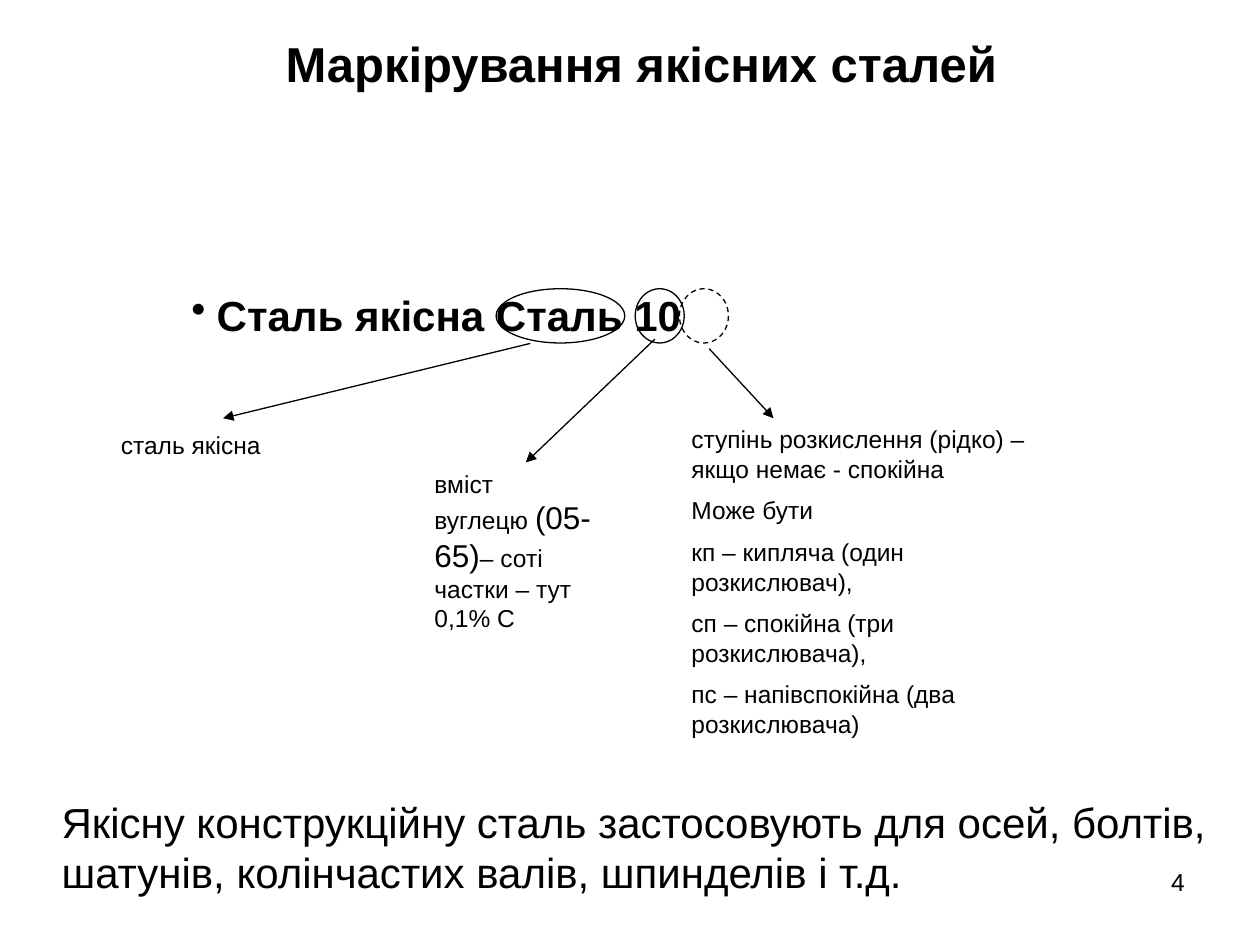
from lxml import etree
from pptx import Presentation
from pptx.dml.color import RGBColor
from pptx.enum import dml, shapes, text
from pptx.oxml.ns import qn
from pptx.util import Pt

FONT, INK = "Arial", "000000"
LEFT, CENTER, RIGHT = text.PP_ALIGN.LEFT, text.PP_ALIGN.CENTER, text.PP_ALIGN.RIGHT

# Content: boxes are (left, top, width, height) in points
TITLE = ("Маркірування якісних сталей", (42.5, 15, 648, 42.5))
GRADE = ("Сталь якісна Сталь 10", (102.25, 162, 310.3, 36))
BULLET_INDENT = 14.5

# Each paragraph is a list of (text, size) runs
NOTES = [
    ((62, 242, 99.5, 24), LEFT, [[("сталь якісна", 14)]]),
    ((241.2, 264.25, 105, 101), LEFT, [
        [("вміст вуглецю ", 14), ("(05-65)", 18), ("– соті частки – тут 0,1% С", 14)]]),
    ((388, 239, 212.5, 191.5), LEFT, [
        [("ступінь розкислення (рідко) – якщо немає - спокійна", 14)],
        [("Може бути", 14)],
        [("кп – кипляча (один розкислювач),", 14)],
        [("сп – спокійна (три розкислювача),", 14)],
        [("пс – напівспокійна (два розкислювача)", 14)]]),
    ((28.1, 451.4, 677.5, 65), LEFT, [
        [("Якісну конструкційну сталь застосовують для осей, болтів, "
          "шатунів, колінчастих валів, шпинделів і т.д.", 24)]]),
    ((516, 492, 168, 37.5), RIGHT, [[("4", 14)]]),
]

# Ovals round the parts of the grade: left, width, dashed
OVAL_TOP, OVAL_HEIGHT = 165, 31
OVALS = [(283.5, 73.5, False), (363, 28, False), (388.25, 28, True)]
ARROWS = [(303, 196.25, 127.5, 239), (374.25, 193.75, 300.5, 264.25),
          (405.25, 199.25, 442, 239)]


def color(value):
    return RGBColor.from_string(value)


def place(sp, box):
    sp.left, sp.top, sp.width, sp.height = map(Pt, box)


def style(font, size, bold=False):
    font.name, font.size, font.bold = FONT, Pt(size), bold
    font.color.rgb = color(INK)


def outline(sp):
    sp.line.color.rgb = color(INK)
    sp.line.width = Pt(0.75)


def add_text(box):
    tf = s.shapes.add_textbox(*map(Pt, box)).text_frame
    tf.word_wrap = True
    return tf


prs = Presentation()
prs.slide_width, prs.slide_height = Pt(720), Pt(540)
s = prs.slides.add_slide(prs.slide_layouts[5])

# Title
title = s.shapes.title
place(title, TITLE[1])
title.text_frame.text = TITLE[0]
title.text_frame.vertical_anchor = text.MSO_ANCHOR.MIDDLE
p = title.text_frame.paragraphs[0]
p.alignment = CENTER
style(p.font, 28, True)

# Bulleted steel grade
p = add_text(GRADE[1]).paragraphs[0]
p.text = GRADE[0]
style(p.font, 24, True)
pPr = p._p.get_or_add_pPr()
pPr.set("marL", str(Pt(BULLET_INDENT)))
pPr.set("indent", str(-Pt(BULLET_INDENT)))
bullet = etree.Element(qn("a:buChar"), char="•")
pPr.insert(0, bullet)

# Ovals
for left, width, dashed in OVALS:
    sp = s.shapes.add_shape(shapes.MSO_SHAPE.OVAL, Pt(left), Pt(OVAL_TOP),
                            Pt(width), Pt(OVAL_HEIGHT))
    sp.shadow.inherit = False
    sp.fill.background()
    outline(sp)
    if dashed:
        sp.line.dash_style = dml.MSO_LINE.DASH

# Arrows
for ends in ARROWS:
    arrow = s.shapes.add_connector(shapes.MSO_CONNECTOR.STRAIGHT, *map(Pt, ends))
    outline(arrow)
    etree.SubElement(arrow.line._get_or_add_ln(), qn("a:tailEnd"), type="triangle")
    etree.SubElement(arrow._element.spPr, qn("a:effectLst"))

# Explanations, usage and slide number
for box, align, paragraphs in NOTES:
    tf = add_text(box)
    for i, runs in enumerate(paragraphs):
        p = tf.add_paragraph() if i else tf.paragraphs[0]
        p.alignment = align
        if i:
            p.space_before = Pt(7)
        for words, size in runs:
            r = p.add_run()
            r.text = words
            style(r.font, size)

prs.save("out.pptx")
